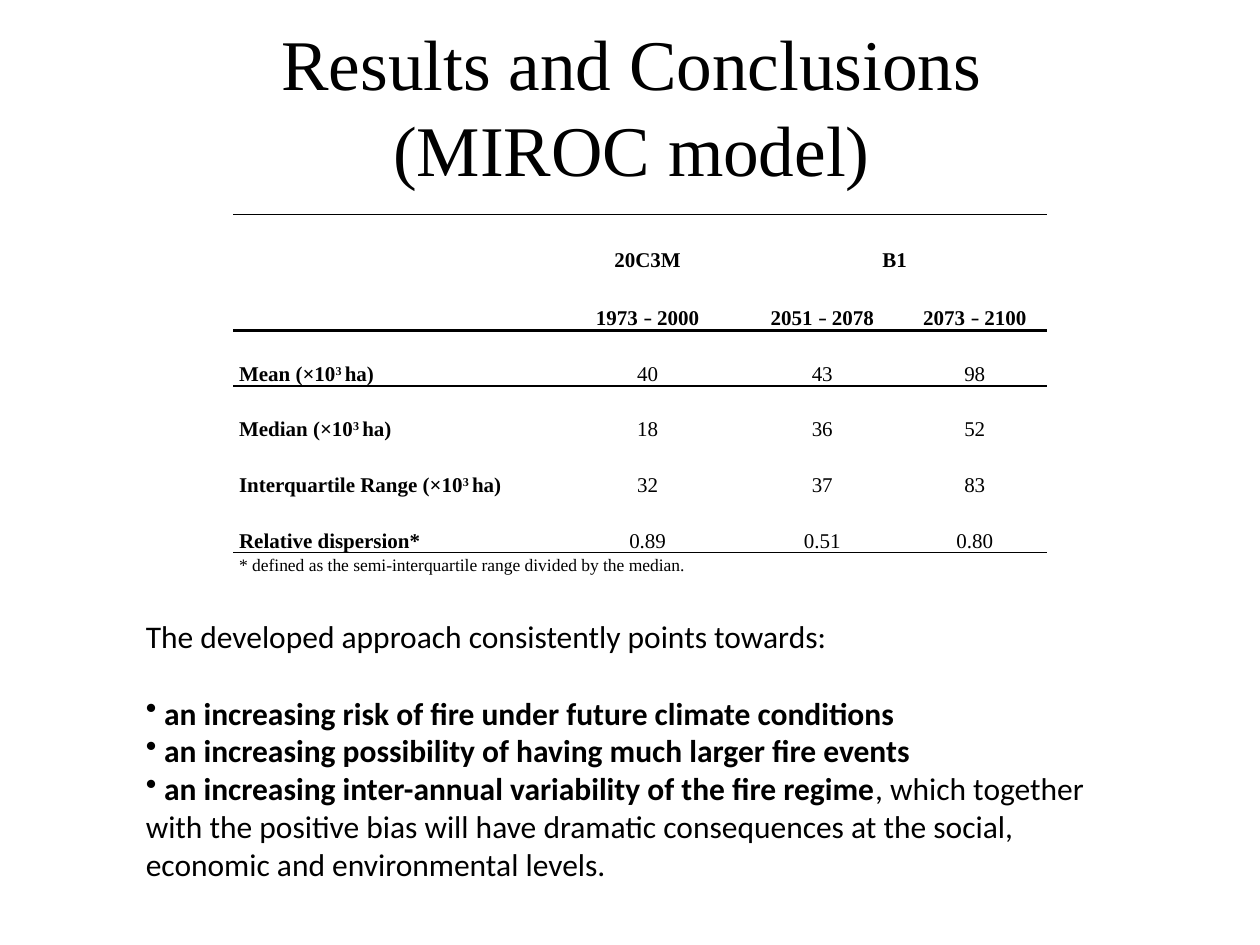
import pptx
import pptx.util
import pptx.enum.text
import pptx.oxml
import pptx.oxml.ns
import pptx.dml.color

Cm, Pt = pptx.util.Cm, pptx.util.Pt
ALIGN = pptx.enum.text.PP_ALIGN
ANCHOR = pptx.enum.text.MSO_ANCHOR
COLORS = {"ink": "000000"}
SERIF, SANS = "Times New Roman", "Calibri"
NO_STYLE = "{2D5ABB26-0587-4C30-8999-92F81FD0307C}"

COLS = [6.45, 3.81, 3.23, 2.92]
ROWS = [1.17] * 2 + [1.12] * 5
YEARS = [("1973 ", "2000"), ("2051 ", "2078"), ("2073 ", "2100")]
UNIT = [("3 ", {"sup": True}), "ha)"]
DATA = [
    (["Mean (×10"] + UNIT, "40", "43", "98"),
    (["Median (×10"] + UNIT, "18", "36", "52"),
    (["Interquartile Range (×10"] + UNIT, "32", "37", "83"),
    (["Relative dispersion*"], "0.89", "0.51", "0.80"),
]
POINTS = [
    ("an increasing risk of fire under future climate conditions", ""),
    ("an increasing possibility of having much larger fire events", ""),
    ("an increasing inter-annual variability of the fire regime",
     ", which together with the positive bias will have dramatic "
     "consequences at the social, economic and environmental levels."),
]


def write(para, text, font=SERIF, size=12, bold=False, sup=False):
    """Add one run of text with its format."""
    run = para.add_run()
    run.text = text
    run.font.name, run.font.size, run.font.bold = font, Pt(size), bold
    run.font.color.rgb = pptx.dml.color.RGBColor.from_string(COLORS["ink"])
    if sup:
        run.font._element.set("baseline", "30000")


def add_box(slide, left, top, width, height, anchor):
    box = slide.shapes.add_textbox(Cm(left), Cm(top), Cm(width), Cm(height))
    frame = box.text_frame
    frame.word_wrap = True
    frame.vertical_anchor = anchor
    return frame


def add_bullet(para):
    props = para._p.get_or_add_pPr()
    props.set("marL", "0")
    props.set("indent", "0")
    mark = pptx.oxml.ns.qn("a:buChar")
    props.append(props.makeelement(mark, {"char": "•"}))


def rule(cell, side, width):
    """Draw a line on the top (T) or bottom (B) of a cell."""
    line = pptx.oxml.parse_xml(
        f'<a:ln{side} {pptx.oxml.ns.nsdecls("a")} w="{Pt(width)}">'
        f'<a:solidFill><a:srgbClr val="{COLORS["ink"]}"/></a:solidFill>'
        f'</a:ln{side}>')
    cell._tc.get_or_add_tcPr().insert(0, line)


def fill_cell(cell, parts, align=ALIGN.CENTER, **style):
    """Write strings or (string, format) pairs into a cell."""
    para = cell.text_frame.paragraphs[0]
    para.alignment, para.line_spacing = align, 1.15
    for part in parts:
        text, extra = (part, {}) if isinstance(part, str) else part
        write(para, text, **{**style, **extra})


def add_title(slide):
    frame = add_box(slide, 1.3, 0.53, 22.86, 3.18, ANCHOR.MIDDLE)
    for num, text in enumerate(["Results and Conclusions", "(MIROC model)"]):
        para = frame.add_paragraph() if num else frame.paragraphs[0]
        para.alignment = ALIGN.CENTER
        write(para, text, size=40.7)


def add_grid(slide):
    shape = slide.shapes.add_table(len(ROWS), len(COLS), Cm(4.7), Cm(4.32),
                                   Cm(sum(COLS)), Cm(sum(ROWS)))
    table = shape.table
    table.first_row = table.horz_banding = False
    table._tbl.tblPr.find(pptx.oxml.ns.qn("a:tableStyleId")).text = NO_STYLE
    for col, width in zip(table.columns, COLS):
        col.width = Cm(width)
    for row, height in zip(table.rows, ROWS):
        row.height = Cm(height)
    for cell in table.iter_cells():
        cell.fill.background()
        cell.vertical_anchor = ANCHOR.BOTTOM
        cell.margin_left = cell.margin_right = Cm(0.12)
        cell.margin_top = cell.margin_bottom = 0

    # Heading rows
    table.cell(0, 2).merge(table.cell(0, 3))
    fill_cell(table.cell(0, 1), ["20C3M"], bold=True)
    fill_cell(table.cell(0, 2), ["B1"], bold=True)
    dash = ("– ", {"font": SANS, "size": 11})
    for col, (start, end) in enumerate(YEARS, 1):
        fill_cell(table.cell(1, col), [start, dash, end], bold=True)

    # Values
    for row, (label, *values) in enumerate(DATA, 2):
        fill_cell(table.cell(row, 0), label, ALIGN.LEFT, bold=True)
        for col, value in enumerate(values, 1):
            fill_cell(table.cell(row, col), [value])

    # Footnote
    last = len(ROWS) - 1
    note = table.cell(last, 0)
    note.merge(table.cell(last, len(COLS) - 1))
    note.vertical_anchor = ANCHOR.TOP
    fill_cell(note, ["* defined as the semi-interquartile range "
                     "divided by the median."], ALIGN.LEFT, size=10)

    # Rules
    for row, side, width in [(0, "T", 1), (1, "B", 1.5), (2, "T", 1.5),
                             (last - 1, "B", 1), (last, "T", 1)]:
        for col in range(len(COLS)):
            rule(table.cell(row, col), side, width)


def add_points(slide):
    frame = add_box(slide, 2.69, 12.32, 20.19, 5.64, ANCHOR.TOP)
    write(frame.paragraphs[0],
          "The developed approach consistently points towards:", SANS, 18)
    for num, (strong, rest) in enumerate(POINTS):
        para = frame.add_paragraph()
        add_bullet(para)
        if num == 0:
            para.space_before = Pt(22)
        write(para, " " + strong, SANS, 18, bold=True)
        if rest:
            write(para, rest, SANS, 18)


def main():
    deck = pptx.Presentation()
    deck.slide_width, deck.slide_height = Cm(25.4), Cm(19.05)
    slide = deck.slides.add_slide(deck.slide_layouts[6])
    add_title(slide)
    add_grid(slide)
    add_points(slide)
    deck.save("out.pptx")


if __name__ == "__main__":
    main()
